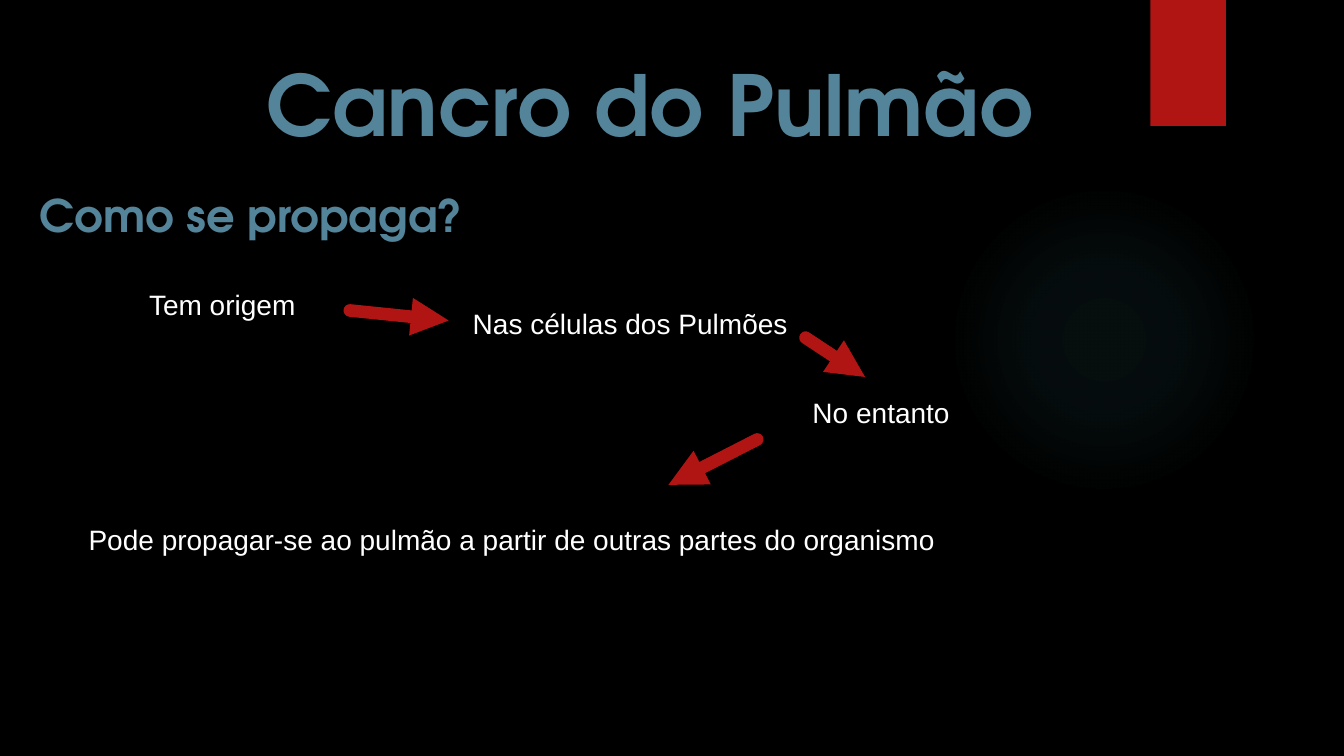
from dataclasses import dataclass

from lxml.etree import SubElement
from pptx import Presentation
from pptx.dml.color import RGBColor
from pptx.enum.shapes import MSO_CONNECTOR, MSO_SHAPE
from pptx.enum.text import MSO_AUTO_SIZE, PP_ALIGN
from pptx.oxml import parse_xml
from pptx.oxml.ns import nsdecls, qn
from pptx.shapes.autoshape import Shape
from pptx.slide import Slide
from pptx.util import Inches, Pt

BLACK = RGBColor(0x00, 0x00, 0x00)
WHITE = RGBColor(0xFF, 0xFF, 0xFF)
RED = RGBColor(0xB0, 0x15, 0x13)
BLUE = RGBColor(0x54, 0x84, 0x9A)
TEAL = RGBColor(0x50, 0xB9, 0xC1)

HEADING_FONT = "TeX Gyre Adventor"
BODY_FONT = "Arial"


@dataclass(frozen=True)
class Label:
    text: str
    left: float
    top: float
    width: float
    height: float = 0.44
    size: int = 20
    heading: bool = False


@dataclass(frozen=True)
class Arrow:
    x1: float
    y1: float
    x2: float
    y2: float


LABELS = [
    Label("Cancro do Pulmão", 2.5, 0.47, 7.89, 1.11, 60, True),
    Label("Como se propaga?", 0.27, 1.81, 4.45, 0.64, 32, True),
    Label("Tem origem", 1.38, 2.8, 1.67),
    Label("Nas células dos Pulmões", 4.59, 2.99, 3.35),
    Label("No entanto", 7.96, 3.87, 1.65),
    Label("Pode propagar-se ao pulmão a partir de outras partes do organismo",
          0.78, 5.13, 8.73),
]

ARROWS = [
    Arrow(3.47, 3.08, 4.45, 3.18),
    Arrow(7.99, 3.35, 8.58, 3.74),
    Arrow(7.51, 4.36, 6.63, 4.81),
]

# Position and opacity of each stop, in percent, from the centre outwards
GLOW_STOPS = [(0, 7), (36, 6), (69, 0)]


def add_plain_shape(s: Slide, kind: MSO_SHAPE, left: float, top: float,
                    width: float, height: float, color: RGBColor) -> Shape:
    sp = s.shapes.add_shape(kind, Inches(left), Inches(top),
                            Inches(width), Inches(height))
    sp.shadow.inherit = False
    sp.fill.solid()
    sp.fill.fore_color.rgb = color
    sp.line.fill.background()
    return sp


def add_glow(s: Slide) -> None:
    """Draw a faint disc that fades out towards its rim."""
    sp = add_plain_shape(s, MSO_SHAPE.OVAL, 9.41, 1.83, 3.08, 3.08, TEAL)
    stops = "".join(
        f'<a:gs pos="{pos * 1000}"><a:srgbClr val="{TEAL}">'
        f'<a:alpha val="{alpha * 1000}"/></a:srgbClr></a:gs>'
        for pos, alpha in GLOW_STOPS)
    gradient = parse_xml(
        f'<a:gradFill {nsdecls("a")} rotWithShape="1"><a:gsLst>{stops}</a:gsLst>'
        '<a:path path="circle"><a:fillToRect l="50000" t="50000" r="50000" '
        'b="50000"/></a:path></a:gradFill>')
    props = sp.element.spPr
    props.replace(props.find(qn("a:solidFill")), gradient)


def add_label(s: Slide, label: Label) -> None:
    box = s.shapes.add_textbox(Inches(label.left), Inches(label.top),
                               Inches(label.width), Inches(label.height))
    tf = box.text_frame
    tf.word_wrap = False
    tf.auto_size = MSO_AUTO_SIZE.SHAPE_TO_FIT_TEXT
    p = tf.paragraphs[0]
    p.text = label.text
    p.alignment = PP_ALIGN.CENTER if label.heading else PP_ALIGN.LEFT
    p.font.size = Pt(label.size)
    p.font.bold = label.heading
    p.font.name = HEADING_FONT if label.heading else BODY_FONT
    p.font.color.rgb = BLUE if label.heading else WHITE


def add_arrow(s: Slide, arrow: Arrow) -> None:
    line = s.shapes.add_connector(
        MSO_CONNECTOR.STRAIGHT, Inches(arrow.x1), Inches(arrow.y1),
        Inches(arrow.x2), Inches(arrow.y2))
    line.line.color.rgb = RED
    line.line.width = Pt(9)
    props = line.element.spPr
    ln = props.find(qn("a:ln"))
    ln.set("cap", "rnd")
    SubElement(ln, qn("a:round"))
    SubElement(ln, qn("a:tailEnd"), type="triangle")
    SubElement(props, qn("a:effectLst"))


def main() -> None:
    prs = Presentation()
    prs.slide_width = Inches(13.33)
    prs.slide_height = Inches(7.5)
    s = prs.slides.add_slide(prs.slide_layouts[6])
    s.background.fill.solid()
    s.background.fill.fore_color.rgb = BLACK

    add_glow(s)
    add_plain_shape(s, MSO_SHAPE.RECTANGLE, 11.41, 0, 0.75, 1.25, RED)
    for label in LABELS:
        add_label(s, label)
    for arrow in ARROWS:
        add_arrow(s, arrow)
    prs.save("out.pptx")


if __name__ == "__main__":
    main()
